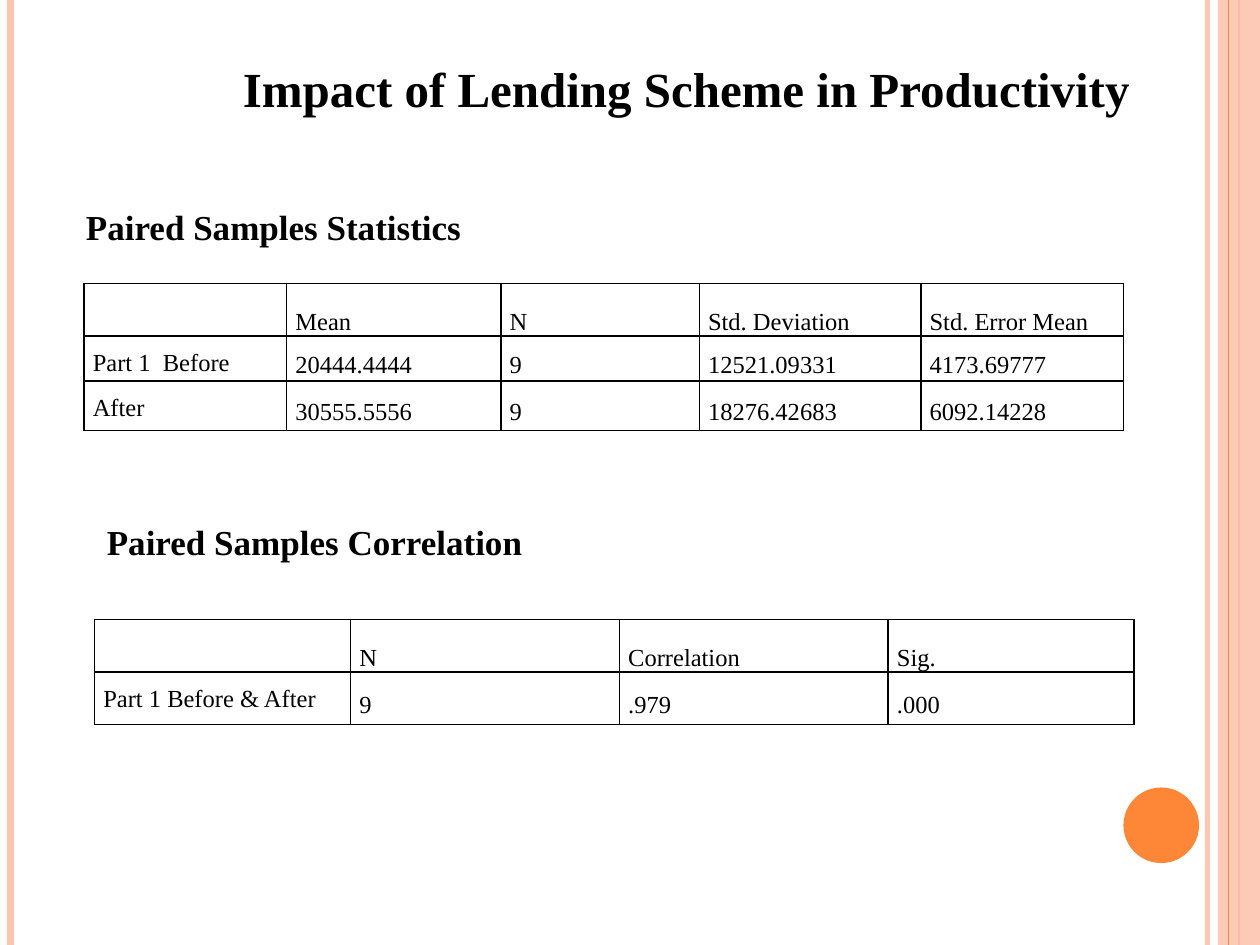
import dataclasses

import pptx
import pptx.dml.color
import pptx.enum.shapes
import pptx.enum.text
import pptx.oxml
import pptx.oxml.ns
import pptx.util

RGBColor = pptx.dml.color.RGBColor
BLACK = RGBColor(0x00, 0x00, 0x00)
ORANGE = RGBColor(0xFE, 0x86, 0x37)
PEACH = RGBColor(0xFE, 0xC3, 0xAE)
FONT = "Times New Roman"
GRID_COLUMNS, GRID_ROWS = 120, 90
CELL_INSET = pptx.util.Inches(0.07)
ANCHOR = pptx.enum.text.MSO_ANCHOR
ALIGN = pptx.enum.text.PP_ALIGN
SHAPES = pptx.enum.shapes.MSO_SHAPE


@dataclasses.dataclass(frozen=True)
class Rule:
    column: float
    color: RGBColor
    points: float
    opacity: int = 100


@dataclasses.dataclass(frozen=True)
class Heading:
    text: str
    column: float
    row: float
    width: float
    height: float
    size: int
    align: ALIGN = ALIGN.LEFT


@dataclasses.dataclass(frozen=True)
class StatTable:
    column: float
    row: float
    widths: tuple[float, ...]
    heights: tuple[float, ...]
    cells: tuple[tuple[str, ...], ...]


RULES = (
    Rule(115, PEACH, 3, 93),
    Rule(1, PEACH, 4.5),
    Rule(118, ORANGE, 1.5),
)
INNER_RULE = Rule(117, ORANGE, 0.75)

HEADINGS = (
    Heading("Impact of Lending Scheme in Productivity", 18, 5, 94.7, 6.8, 28, ALIGN.CENTER),
    Heading("Paired Samples Statistics", 7, 19, 57, 5.3, 20),
    Heading("Paired Samples Correlation", 9, 49, 48, 5.3, 20),
)
TABLES = (
    StatTable(
        8, 27, (19.3, 20.4, 18.9, 21.1, 19.3), (5, 4.3, 4.7),
        (
            ("", "Mean", "N", "Std. Deviation", "Std. Error Mean"),
            ("Part 1  Before", "20444.4444", "9", "12521.09331", "4173.69777"),
            ("After", "30555.5556", "9", "18276.42683", "6092.14228"),
        ),
    ),
    StatTable(
        9, 59, (24.4, 25.6, 25.6, 23.4), (5, 5),
        (
            ("", "N", "Correlation", "Sig."),
            ("Part 1 Before & After", "9", ".979", ".000"),
        ),
    ),
)

deck = pptx.Presentation()
deck.slide_width = pptx.util.Inches(10)
deck.slide_height = pptx.util.Inches(7.5)
slide = deck.slides.add_slide(deck.slide_layouts[6])


def across(columns: float) -> int:
    return round(deck.slide_width * columns / GRID_COLUMNS)


def down(rows: float) -> int:
    return round(deck.slide_height * rows / GRID_ROWS)


def set_opacity(fill, percent: int) -> None:
    color = fill._xPr.find(".//" + pptx.oxml.ns.qn("a:srgbClr"))
    alpha = color.makeelement(pptx.oxml.ns.qn("a:alpha"), {"val": str(percent * 1000)})
    color.append(alpha)


def draw_rule(rule: Rule) -> None:
    x = across(rule.column)
    line = slide.shapes.add_connector(
        pptx.enum.shapes.MSO_CONNECTOR.STRAIGHT, x, 0, x, deck.slide_height)
    line.line.width = pptx.util.Pt(rule.points)
    line.line.color.rgb = rule.color
    if rule.opacity < 100:
        set_opacity(line.line.fill, rule.opacity)
    properties = line._element.spPr
    properties.append(properties.makeelement(pptx.oxml.ns.qn("a:effectLst"), {}))


def draw_ornament(kind: SHAPES, column: float, row: float, width: float,
                  height: float, color: RGBColor, opacity: int = 100) -> None:
    ornament = slide.shapes.add_shape(
        kind, across(column), down(row), across(width), down(height))
    ornament.shadow.inherit = False
    ornament.line.fill.background()
    ornament.fill.solid()
    ornament.fill.fore_color.rgb = color
    if opacity < 100:
        set_opacity(ornament.fill, opacity)


def add_text(paragraph, text: str, size: int, bold: bool = False) -> None:
    run = paragraph.add_run()
    run.text = text
    run.font.name = FONT
    run.font.size = pptx.util.Pt(size)
    run.font.bold = bold
    run.font.color.rgb = BLACK


def draw_heading(heading: Heading) -> None:
    box = slide.shapes.add_textbox(
        across(heading.column), down(heading.row),
        across(heading.width), down(heading.height))
    frame = box.text_frame
    frame.word_wrap = True
    frame.auto_size = pptx.enum.text.MSO_AUTO_SIZE.SHAPE_TO_FIT_TEXT
    frame.paragraphs[0].alignment = heading.align
    add_text(frame.paragraphs[0], heading.text, heading.size, bold=True)


def add_borders(cell) -> None:
    """Put a 1 pt black line on all four sides, ahead of the cell's fill."""
    properties = cell._tc.get_or_add_tcPr()
    for position, side in enumerate(("lnL", "lnR", "lnT", "lnB")):
        properties.insert(position, pptx.oxml.parse_xml(
            f'<a:{side} {pptx.oxml.ns.nsdecls("a")} w="{pptx.util.Pt(1)}">'
            f'<a:solidFill><a:srgbClr val="{BLACK}"/></a:solidFill></a:{side}>'))


def fill_cell(cell, text: str, is_header: bool, is_label: bool) -> None:
    cell.fill.background()
    add_borders(cell)
    cell.margin_left = cell.margin_right = CELL_INSET
    cell.margin_top = cell.margin_bottom = 0
    if not text:
        return
    if is_header:
        cell.vertical_anchor = ANCHOR.BOTTOM
    else:
        cell.vertical_anchor = ANCHOR.TOP if is_label else ANCHOR.MIDDLE
    paragraph = cell.text_frame.paragraphs[0]
    paragraph.alignment = ALIGN.JUSTIFY
    paragraph.line_spacing = 1.5
    if is_label:
        paragraph.space_after = pptx.util.Pt(15)
    add_text(paragraph, text, 14)


def draw_table(stats: StatTable) -> None:
    table = slide.shapes.add_table(
        len(stats.heights), len(stats.widths), across(stats.column), down(stats.row),
        across(sum(stats.widths)), down(sum(stats.heights))).table
    table.first_row = table.horz_banding = False
    for column, width in zip(table.columns, stats.widths):
        column.width = across(width)
    for row, height in zip(table.rows, stats.heights):
        row.height = down(height)
    for r, texts in enumerate(stats.cells):
        for c, text in enumerate(texts):
            fill_cell(table.cell(r, c), text, is_header=r == 0, is_label=c == 0)


for side_rule in RULES:
    draw_rule(side_rule)
draw_ornament(SHAPES.RECTANGLE, 116, 0, 4, GRID_ROWS, PEACH, opacity=87)
draw_rule(INNER_RULE)
draw_ornament(SHAPES.OVAL, 107, 75, 7.2, 7.2, ORANGE)
for section_heading in HEADINGS:
    draw_heading(section_heading)
for stat_table in TABLES:
    draw_table(stat_table)

deck.save("out.pptx")
